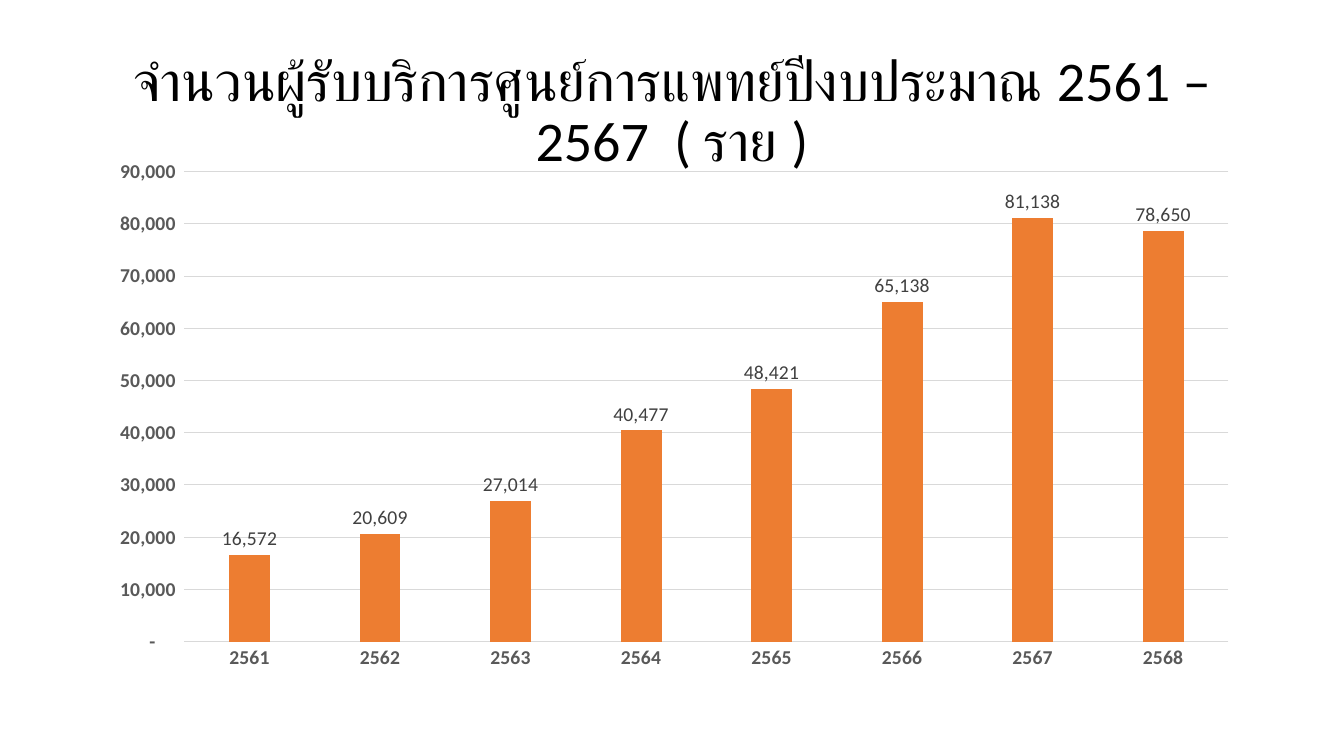
import pptx
import pptx.chart.data
import pptx.dml.color
import pptx.enum.chart
import pptx.enum.text
import pptx.util

FONT = "Calibri"
TITLE = "จำนวนผู้รับบริการศูนย์การแพทย์ปีงบประมาณ 2561 – 2567  ( ราย )"
FIRST_YEAR = 2561
PATIENTS = [16572, 20609, 27014, 40477, 48421, 65138, 81138, 78650]
AXIS_FORMAT = '_(* #,##0_);_(* \\(#,##0\\);_(* "-"??_);_('


def color(hex_string):
    return pptx.dml.color.RGBColor.from_string(hex_string)


def set_attributes(target, values):
    for name, value in values.items():
        setattr(target, name, value)


def format_font(font, size, hex_string, bold=False):
    set_attributes(font, {"name": FONT, "size": pptx.util.Pt(size), "bold": bold})
    font.color.rgb = color(hex_string)


def format_line(line, hex_string):
    line.color.rgb = color(hex_string)
    line.width = pptx.util.Pt(0.75)


def add_title(slide, box):
    shape = slide.shapes.add_textbox(*map(pptx.util.Pt, box))
    set_attributes(shape.text_frame, {
        "word_wrap": True,
        "vertical_anchor": pptx.enum.text.MSO_ANCHOR.MIDDLE,
    })
    paragraph = shape.text_frame.paragraphs[0]
    set_attributes(paragraph, {
        "alignment": pptx.enum.text.PP_ALIGN.CENTER,
        "line_spacing": 0.9,
    })
    run = paragraph.add_run()
    run.text = TITLE
    format_font(run.font, 40, "000000")


def add_patient_chart(slide, box):
    data = pptx.chart.data.CategoryChartData(number_format="#,##0")
    data.categories = [str(FIRST_YEAR + index) for index in range(len(PATIENTS))]
    data.add_series("Series 1", PATIENTS)
    chart = slide.shapes.add_chart(
        pptx.enum.chart.XL_CHART_TYPE.COLUMN_CLUSTERED,
        *map(pptx.util.Pt, box), data).chart
    set_attributes(chart, {"has_legend": False, "has_title": False})
    format_font(chart.font, 10, "000000")

    plot = chart.plots[0]
    set_attributes(plot, {
        "gap_width": 219, "overlap": -27,
        "vary_by_categories": False, "has_data_labels": True,
    })
    set_attributes(plot.data_labels, {
        "show_value": True,
        "number_format": "#,##0",
        "number_format_is_linked": False,
        "position": pptx.enum.chart.XL_LABEL_POSITION.OUTSIDE_END,
    })
    format_font(plot.data_labels.font, 14, "404040")
    fill = plot.series[0].format.fill
    fill.solid()
    fill.fore_color.rgb = color("ED7D31")

    for axis in (chart.category_axis, chart.value_axis):
        set_attributes(axis, {
            "major_tick_mark": pptx.enum.chart.XL_TICK_MARK.NONE,
            "minor_tick_mark": pptx.enum.chart.XL_TICK_MARK.NONE,
        })
        format_font(axis.tick_labels.font, 14, "595959", True)
    format_line(chart.category_axis.format.line, "D9D9D9")

    value_axis = chart.value_axis
    set_attributes(value_axis, {
        "minimum_scale": 0, "maximum_scale": 90000,
        "major_unit": 10000, "has_major_gridlines": True,
    })
    format_line(value_axis.major_gridlines.format.line, "D9D9D9")
    value_axis.format.line.fill.background()
    set_attributes(value_axis.tick_labels, {
        "number_format": AXIS_FORMAT, "number_format_is_linked": False,
    })


def main():
    presentation = pptx.Presentation()
    set_attributes(presentation, {
        "slide_width": pptx.util.Pt(960), "slide_height": pptx.util.Pt(540),
    })
    slide = presentation.slides.add_slide(presentation.slide_layouts[6])
    left, width = 66, 828
    add_title(slide, (left, 28.75, width, 104.4))
    add_patient_chart(slide, (left, 106.5, width, 379.5))
    presentation.save("out.pptx")


if __name__ == "__main__":
    main()
